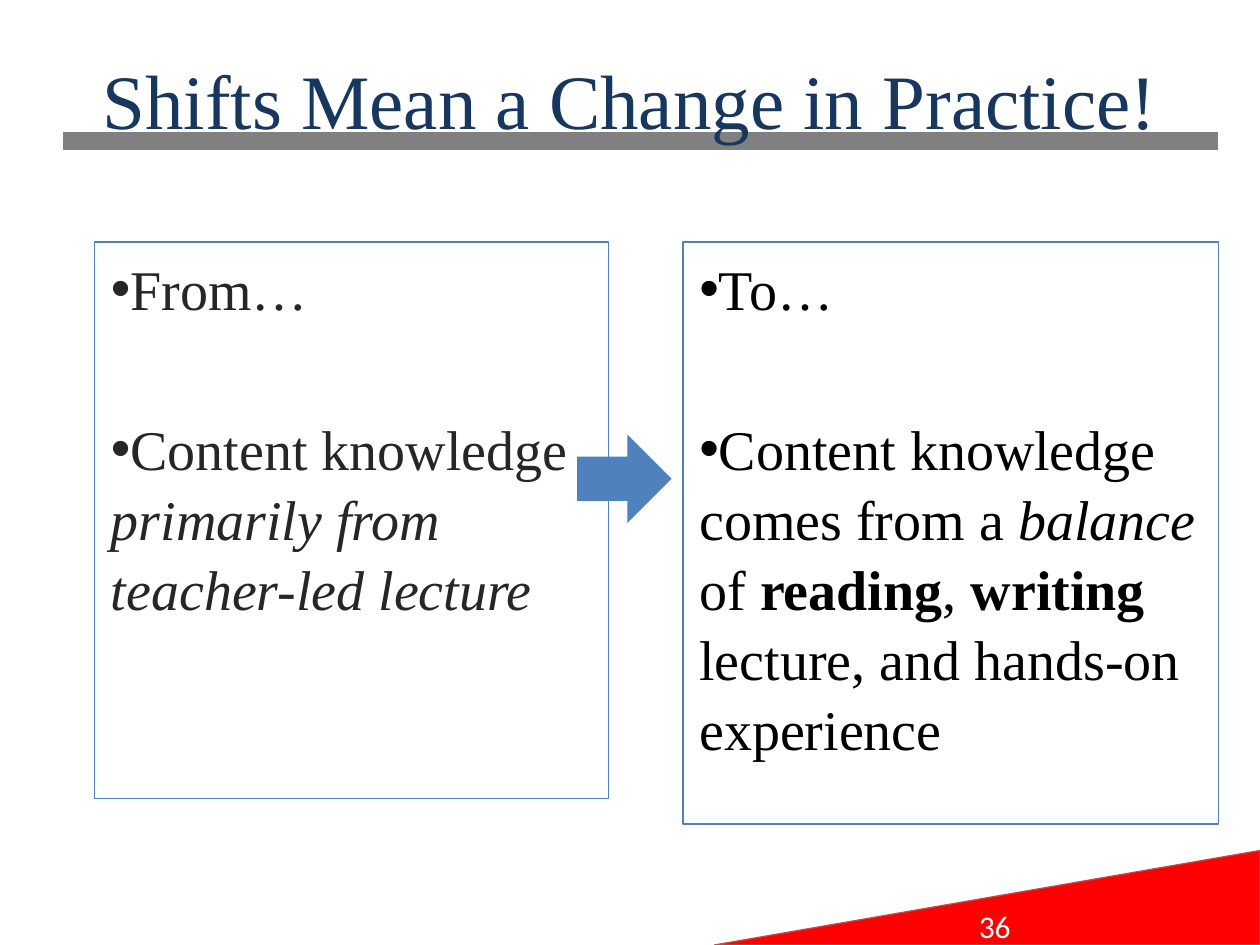
from lxml.etree import SubElement
from pptx import Presentation
from pptx.dml.color import RGBColor
from pptx.enum.shapes import MSO_CONNECTOR, MSO_SHAPE
from pptx.enum.text import MSO_ANCHOR, MSO_AUTO_SIZE, PP_ALIGN
from pptx.oxml.ns import qn
from pptx.util import Inches, Pt

NAVY = RGBColor(0x17, 0x37, 0x5E)
BLUE = RGBColor(0x4F, 0x81, 0xBD)
RED = RGBColor(0xFF, 0x00, 0x00)
BRICK = RGBColor(0xBF, 0x4C, 0x48)
GRAY = RGBColor(0x80, 0x80, 0x80)
DARK = RGBColor(0x26, 0x26, 0x26)
BLACK = RGBColor(0x00, 0x00, 0x00)
WHITE = RGBColor(0xFF, 0xFF, 0xFF)
SERIF = "Times New Roman"


def inches(box):
    return [Inches(v) for v in box]


def add_text(para, text, size=32, color=BLACK, font=SERIF, bold=False, italic=False):
    run = para.add_run()
    run.text = text
    run.font.size = Pt(size)
    run.font.name = font
    run.font.color.rgb = color
    run.font.bold = bold
    run.font.italic = italic


def add_form(slide, kind, box, fill=None, line=None):
    form = slide.shapes.add_shape(kind, *inches(box))
    form.shadow.inherit = False
    if fill is None:
        form.fill.background()
    else:
        form.fill.solid()
        form.fill.fore_color.rgb = fill
    if line is None:
        form.line.fill.background()
    else:
        form.line.color.rgb = line
        form.line.width = Pt(0.75)
    return form


def add_bullet(para):
    props = para._p.get_or_add_pPr()
    props.set("marL", "0")
    props.set("indent", "0")
    SubElement(props, qn("a:buFont")).set("typeface", "Arial")
    SubElement(props, qn("a:buChar")).set("char", "•")


def add_rule(slide, left, right, y):
    rule = slide.shapes.add_connector(
        MSO_CONNECTOR.STRAIGHT, *inches((left, y, right, y)))
    rule.line.color.rgb = GRAY
    rule.line.width = Pt(10)
    SubElement(rule._element.spPr, qn("a:effectLst"))


def add_title(slide, box, text):
    title = slide.shapes.title
    title.left, title.top, title.width, title.height = inches(box)
    frame = title.text_frame
    frame.auto_size = MSO_AUTO_SIZE.NONE
    frame.vertical_anchor = MSO_ANCHOR.TOP
    frame.margin_top = Inches(0.12)
    para = frame.paragraphs[0]
    para.alignment = PP_ALIGN.CENTER
    add_text(para, text, size=44, color=NAVY)


def add_panel(slide, box, head, parts, color):
    """Outlined box with a bulleted heading and a bulleted statement."""
    frame = add_form(slide, MSO_SHAPE.RECTANGLE, box, line=BLUE).text_frame
    frame.word_wrap = True
    frame.vertical_anchor = MSO_ANCHOR.TOP
    frame.margin_left = frame.margin_right = Inches(0.13)
    frame.margin_top = frame.margin_bottom = Inches(0.08)
    first, second = frame.paragraphs[0], frame.add_paragraph()
    second.space_before = Pt(51.4)
    for para, runs in ((first, [(head, {})]), (second, parts)):
        para.alignment = PP_ALIGN.LEFT
        para.line_spacing = 1.04
        add_bullet(para)
        for text, style in runs:
            add_text(para, text, color=color, **style)


def add_corner(slide, box, number):
    """Red wedge at the lower right with the page number on it."""
    left, top, width, height = box
    wedge = add_form(slide, MSO_SHAPE.RIGHT_TRIANGLE, box, RED, BRICK)
    wedge._element.spPr.get_or_add_xfrm().set("flipH", "1")
    label = slide.shapes.add_textbox(
        *inches((left + 2, top + 0.4, width - 2, height - 0.4)))
    label.text_frame.word_wrap = True
    add_text(label.text_frame.paragraphs[0], number, size=18, color=WHITE, font="Calibri")


def main():
    deck = Presentation()
    deck.slide_width, deck.slide_height = Inches(10), Inches(7.5)
    slide = deck.slides.add_slide(deck.slide_layouts[5])
    # The title's descenders lie over the rule, so the rule goes behind it.
    add_rule(slide, 0.5, 9.67, 1.12)
    tree = slide.shapes._spTree
    tree.append(slide.shapes.title._element)
    add_title(slide, (0.5, 0.3, 9, 1.25), "Shifts Mean a Change in Practice!")
    add_corner(slide, (5.67, 6.75, 4.33, 0.75), "36")
    bold, slant = {"bold": True}, {"italic": True}
    add_panel(slide, (0.75, 1.92, 4.08, 4.42), "From…", [
        ("Content knowledge ", {}),
        ("primarily from teacher-led lecture", slant),
    ], DARK)
    add_panel(slide, (5.42, 1.92, 4.25, 4.62), "To…", [
        ("Content knowledge comes from a ", {}),
        ("balance", slant),
        (" of ", {}),
        ("reading", bold),
        (", ", {}),
        ("writing", bold),
        (" lecture, and hands-on experience", {}),
    ], BLACK)
    add_form(slide, MSO_SHAPE.RIGHT_ARROW, (4.58, 3.45, 0.75, 0.7), BLUE)
    deck.save("out.pptx")


if __name__ == "__main__":
    main()
